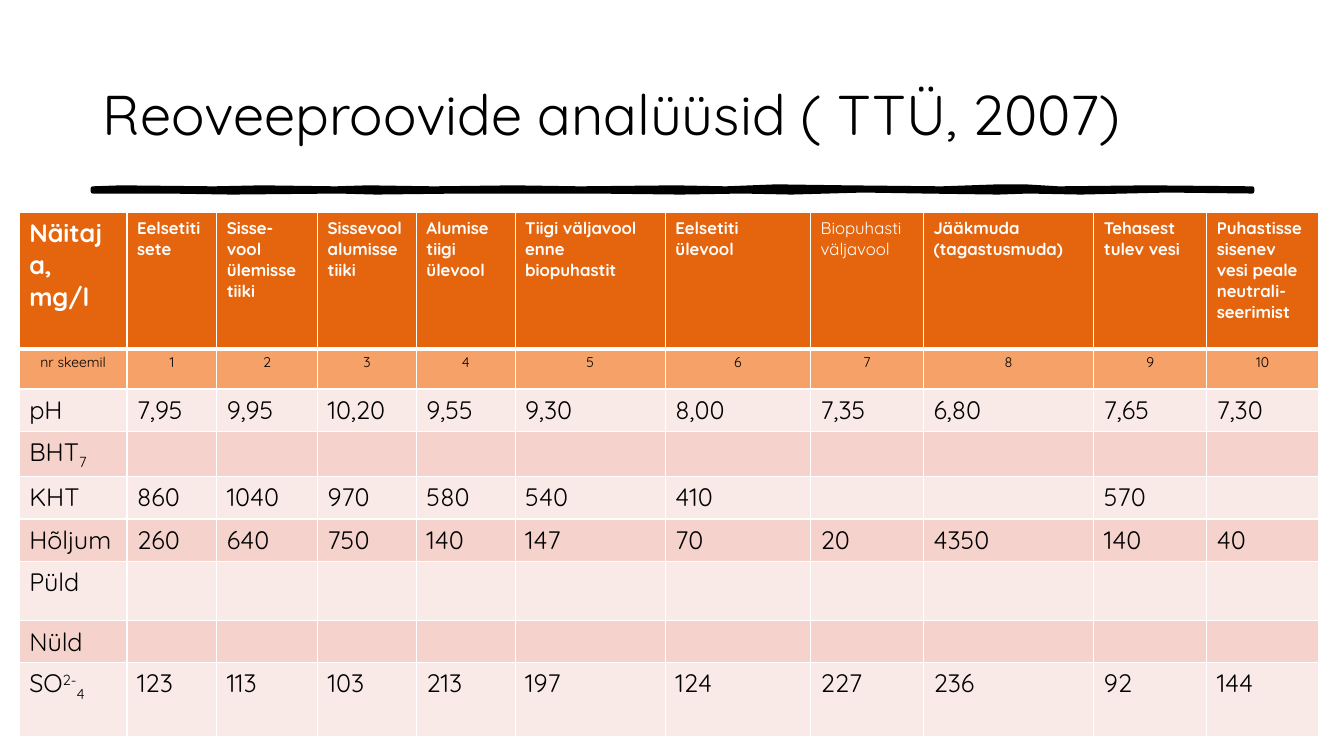
from dataclasses import dataclass

from lxml import etree
from pptx import Presentation
from pptx import util as u
from pptx.dml.color import RGBColor
from pptx.enum import text
from pptx.oxml import ns


@dataclass(frozen=True)
class Theme:
    font: str = "Quicksand"
    ink: str = "000000"
    paper: str = "FFFFFF"
    header: str = "E4650E"
    number: str = "F6A168"
    light: str = "FAEAE7"
    dark: str = "F5D3CC"
    title_size: int = 40
    body_size: int = 18
    header_size: int = 12
    number_size: int = 10
    rule: float = 3
    border: float = 1


@dataclass(frozen=True)
class Run:
    text: str
    baseline: int = 0  # percent; negative is subscript


@dataclass(frozen=True)
class Row:
    height: float
    fill: str
    label: tuple[Run, ...]
    values: tuple[str, ...]
    size: int
    colour: str
    centred: bool = False


THEME = Theme()
COLUMNS = (1.07, 0.89, 1, 0.98, 0.98, 1.49, 1.44, 1.12, 1.69, 1.12, 1.11)
REGULAR_HEADER = 7  # the one column whose heading is not bold

HEADINGS = (
    "Eelsetiti sete", "Sisse-vool ülemisse tiiki", "Sissevool alumisse tiiki",
    "Alumise tiigi ülevool", "Tiigi väljavool enne biopuhastit",
    "Eelsetiti ülevool", "Biopuhasti väljavool", "Jääkmuda (tagastusmuda)",
    "Tehasest tulev vesi", "Puhastisse sisenev vesi peale neutrali-seerimist",
)
EMPTY = ("",) * len(HEADINGS)

# Height, label and values of each indicator
INDICATORS = (
    (0.42, (Run("pH"),), ("7,95", "9,95", "10,20", "9,55", "9,30", "8,00",
                          "7,35", "6,80", "7,65", "7,30")),
    (0.45, (Run("BHT"), Run("7", -25)), EMPTY),
    (0.42, (Run("KHT"),), ("860", "1040", "970", "580", "540", "410",
                           "", "", "570", "")),
    (0.42, (Run("Hõljum"),), ("260", "640", "750", "140", "147", "70",
                              "20", "4350", "140", "40")),
    (0.59, (Run("Püld"),), EMPTY),
    (0.41, (Run("Nüld"),), EMPTY),
    (0.74, (Run("SO"), Run("2-", 30), Run("4", -25)),
     ("123", "113", "103", "213", "197", "124", "227", "236", "92", "144")),
)

ROWS = (
    Row(1.35, THEME.header, (Run("Näitaja, mg/l"),), HEADINGS,
        THEME.header_size, THEME.paper),
    Row(0.4, THEME.number, (Run("nr skeemil"),),
        tuple(str(n + 1) for n in range(len(HEADINGS))),
        THEME.number_size, THEME.ink, centred=True),
    *(Row(height, (THEME.light, THEME.dark)[i % 2], label, values,
          THEME.body_size, THEME.ink)
      for i, (height, label, values) in enumerate(INDICATORS)),
)

# Hand-drawn rule: points of its upper and lower edge
UPPER_EDGE = (
    (0.92, 1.87), (1.2, 1.86), (2.12, 1.87), (2.6, 1.86), (3.33, 1.87),
    (3.65, 1.86), (4.3, 1.87), (5.1, 1.86), (5.75, 1.87), (6.7, 1.86),
    (7.2, 1.87), (7.7, 1.85), (8.4, 1.86), (9.34, 1.87), (9.9, 1.85),
    (10.17, 1.85), (10.5, 1.87), (11.4, 1.86), (12.42, 1.87),
)
LOWER_EDGE = (
    (12.42, 1.9), (11.58, 1.89), (10.72, 1.91), (10.2, 1.9), (9.9, 1.91),
    (9.17, 1.9), (8.56, 1.89), (7.85, 1.91), (7.36, 1.9), (6.75, 1.91),
    (5.89, 1.9), (4.57, 1.9), (3.73, 1.91), (3.36, 1.9), (2.3, 1.91),
    (1.66, 1.9), (0.92, 1.9),
)


def rgb(colour: str) -> RGBColor:
    return RGBColor.from_string(colour)


def set_font(font, size: float, colour: str, bold: bool = False) -> None:
    font.name, font.size, font.bold = THEME.font, u.Pt(size), bold
    font.color.rgb = rgb(colour)


def set_border(cell, side: str, width: float) -> None:
    line = etree.SubElement(cell._tc.get_or_add_tcPr(), ns.qn(f"a:ln{side}"),
                            w=str(u.Pt(width)))
    fill = etree.SubElement(line, ns.qn("a:solidFill"))
    etree.SubElement(fill, ns.qn("a:srgbClr"), val=THEME.paper)


def draw_title(slide, wording: str) -> None:
    title = slide.shapes.title
    title.left, title.top = u.Inches(0.92), u.Inches(0.4)
    title.width, title.height = u.Inches(11.5), u.Inches(1.45)
    frame = title.text_frame
    frame.text = wording
    frame.word_wrap = True
    frame.vertical_anchor = text.MSO_ANCHOR.MIDDLE
    frame.paragraphs[0].alignment = text.PP_ALIGN.LEFT
    set_font(frame.paragraphs[0].font, THEME.title_size, THEME.ink)


def draw_rule(slide) -> None:
    start, *rest = [(u.Inches(x), u.Inches(y)) for x, y in UPPER_EDGE + LOWER_EDGE]
    builder = slide.shapes.build_freeform(*start)
    builder.add_line_segments(rest, close=True)
    rule = builder.convert_to_shape()
    rule.shadow.inherit = False
    rule.fill.solid()
    rule.fill.fore_color.rgb = rgb(THEME.ink)
    rule.line.color.rgb = rgb(THEME.ink)
    rule.line.width = u.Pt(THEME.rule)


def fill_cell(cell, row: Row, runs: tuple[Run, ...], size: int, bold: bool) -> None:
    paragraph = cell.text_frame.paragraphs[0]
    paragraph.alignment = text.PP_ALIGN.CENTER if row.centred else text.PP_ALIGN.LEFT
    set_font(paragraph.font, size, row.colour, bold)
    for part in runs:
        if part.text:
            run = paragraph.add_run()
            run.text = part.text
            if part.baseline:
                run.font._element.set("baseline", str(part.baseline * 1000))
    cell.fill.solid()
    cell.fill.fore_color.rgb = rgb(row.fill)


def draw_table(slide) -> None:
    table = slide.shapes.add_table(
        len(ROWS), len(COLUMNS), u.Inches(0.19), u.Inches(2.11),
        u.Inches(sum(COLUMNS)), u.Inches(sum(row.height for row in ROWS))).table
    table.first_row = table.horz_banding = False
    for column, width in zip(table.columns, COLUMNS):
        column.width = u.Inches(width)
    for r, row in enumerate(ROWS):
        table.rows[r].height = u.Inches(row.height)
        contents = (row.label, *((Run(value),) for value in row.values))
        for c, runs in enumerate(contents):
            cell = table.cell(r, c)
            # The edge between the first two rows is heavier
            for side in "LRTB":
                heavy = (r, side) in ((0, "B"), (1, "T"))
                set_border(cell, side, THEME.rule if heavy else THEME.border)
            is_corner = r == 0 and c == 0
            fill_cell(cell, row, runs, THEME.body_size if is_corner else row.size,
                      bold=r == 0 and c != REGULAR_HEADER)


def main() -> None:
    deck = Presentation()
    deck.slide_width, deck.slide_height = u.Inches(13.33), u.Inches(7.5)
    slide = deck.slides.add_slide(deck.slide_layouts[5])
    draw_rule(slide)
    draw_title(slide, "Reoveeproovide analüüsid ( TTÜ, 2007)")
    draw_table(slide)
    deck.save("out.pptx")


if __name__ == "__main__":
    main()
